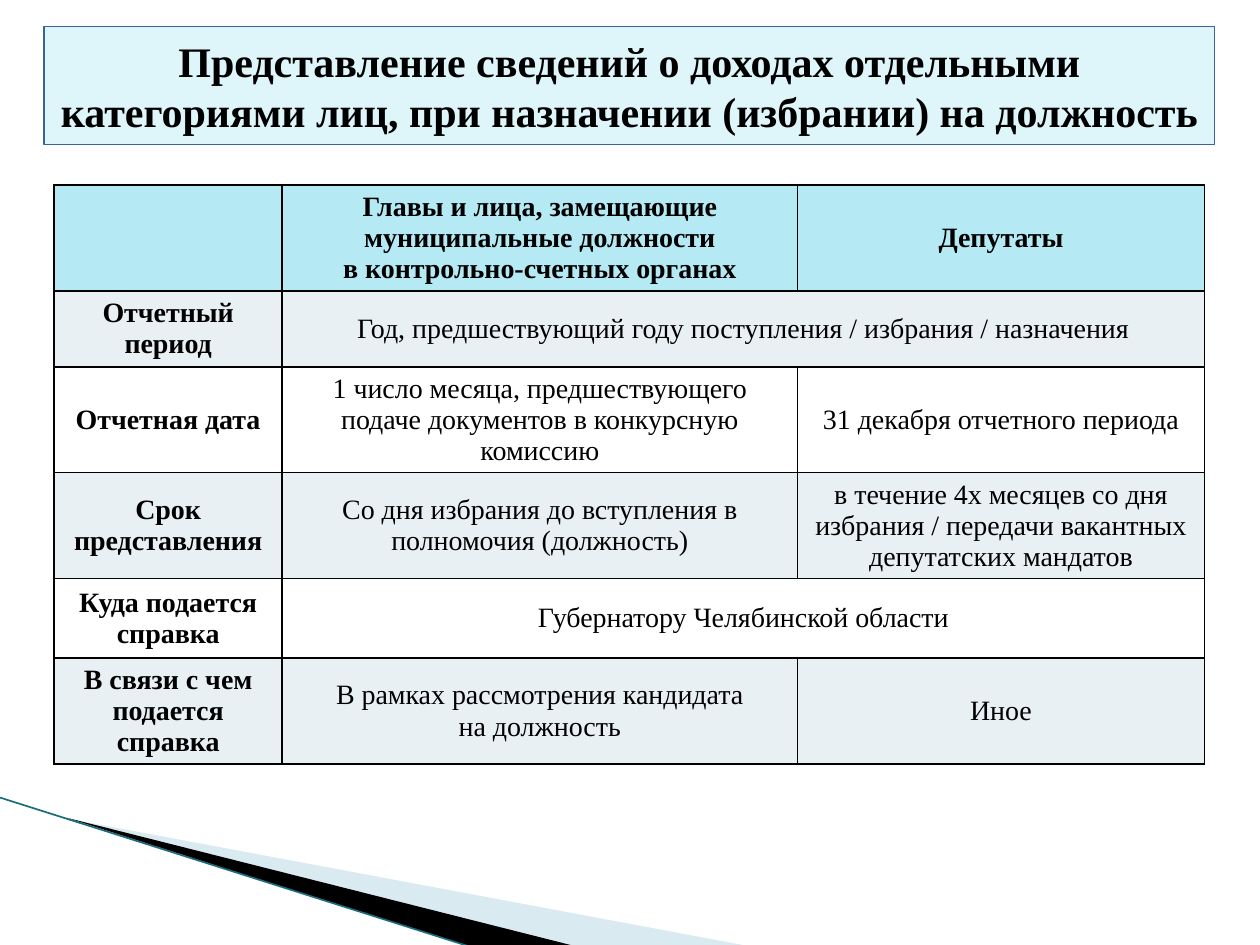
from collections import namedtuple

from lxml.etree import SubElement
from pptx import Presentation
from pptx.dml.color import RGBColor
from pptx.enum.shapes import MSO_CONNECTOR, MSO_SHAPE
from pptx.enum.text import MSO_ANCHOR, PP_ALIGN
from pptx.oxml import parse_xml
from pptx.oxml.ns import nsdecls, qn
from pptx.util import Inches, Pt

# The page is a grid of 1000 columns by 750 rows
UNIT = Inches(0.01)
COLUMNS, ROWS = 1000, 750
Box = namedtuple("Box", "left top width height")

FONT = "Times New Roman"
BLACK = RGBColor(0x00, 0x00, 0x00)
WHITE = RGBColor(0xFF, 0xFF, 0xFF)
TITLE_FILL = RGBColor(0xDE, 0xF5, 0xFA)
TITLE_LINE = RGBColor(0x39, 0x63, 0x9D)
HEADER_FILL = RGBColor(0xB5, 0xE9, 0xF4)
BAND_FILL = RGBColor(0xE8, 0xF0, 0xF4)
WEDGE_BLUE = RGBColor(0xA0, 0xCB, 0xDC)
EDGE_TEAL = RGBColor(0x1B, 0x6B, 0x7F)

TITLE = ("Представление сведений о доходах отдельными категориями лиц, "
         "при назначении (избрании) на должность")
COLUMN_WIDTHS = [181, 409, 323]
ROW_HEIGHTS = [84, 60, 84, 84, 63, 84]
# None marks a cell joined to the one on its left
TABLE_ROWS = [
    ["", "Главы и лица, замещающие муниципальные должности\vв контрольно-счетных органах",
     "Депутаты"],
    ["Отчетный период", "Год, предшествующий году поступления / избрания / назначения", None],
    ["Отчетная дата",
     "1 число месяца, предшествующего подаче документов в конкурсную комиссию",
     "31 декабря отчетного периода"],
    ["Срок представления", "Со дня избрания до вступления в полномочия (должность)",
     "в течение 4х месяцев со дня избрания / передачи вакантных депутатских мандатов"],
    ["Куда подается справка", "Губернатору Челябинской области", None],
    ["В связи с чем подается справка", "В рамках рассмотрения кандидата\vна должность", "Иное"],
]


def scaled(box):
    return [value * UNIT for value in box]


def write_text(frame, text, size, bold):
    frame.text = text
    para = frame.paragraphs[0]
    para.alignment = PP_ALIGN.CENTER
    para.font.size = Pt(size)
    for span in para.runs:
        span.font.name = FONT
        span.font.size = Pt(size)
        span.font.bold = bold
        span.font.color.rgb = BLACK


def add_wedge(page, box, points, color, opacity=100):
    corners = [(box.left + x, box.top + y) for x, y in points]
    builder = page.shapes.build_freeform(*corners[0], scale=UNIT)
    builder.add_line_segments(corners[1:], close=True)
    wedge = builder.convert_to_shape()
    wedge.shadow.inherit = False
    wedge.fill.solid()
    wedge.fill.fore_color.rgb = color
    wedge.line.fill.background()
    if opacity < 100:
        tint = wedge.fill._xPr.find(".//" + qn("a:srgbClr"))
        SubElement(tint, qn("a:alpha"), val=str(opacity * 1000))


def add_corner(page, box):
    """Pale and black wedges with a thin edge along the bottom left."""
    right, bottom = box.width, box.height
    add_wedge(page, box, [(55, 17), (right, bottom), (456, bottom)], WEDGE_BLUE, 40)
    add_wedge(page, box, [(53, 16), (457, bottom), (372, bottom)], BLACK)
    left, top, _, height = scaled(box)
    edge = page.shapes.add_connector(
        MSO_CONNECTOR.STRAIGHT, left, top, left + 372 * UNIT, top + height)
    edge.line.color.rgb = EDGE_TEAL
    edge.line.width = Pt(0.95)
    SubElement(edge._element.spPr, qn("a:effectLst"))


def add_title(page, box):
    banner = page.shapes.add_shape(MSO_SHAPE.RECTANGLE, *scaled(box))
    banner.shadow.inherit = False
    banner.fill.solid()
    banner.fill.fore_color.rgb = TITLE_FILL
    banner.line.color.rgb = TITLE_LINE
    banner.line.width = Pt(0.75)
    banner.text_frame.word_wrap = True
    banner.text_frame.vertical_anchor = MSO_ANCHOR.MIDDLE
    write_text(banner.text_frame, TITLE, 24, True)


def style_cell(cell, color):
    cell.vertical_anchor = MSO_ANCHOR.MIDDLE
    cell.fill.solid()
    cell.fill.fore_color.rgb = color
    properties = cell._tc.get_or_add_tcPr()
    for position, side in enumerate("LRTB"):
        properties.insert(position, parse_xml(
            f'<a:ln{side} {nsdecls("a")} w="12700"><a:solidFill>'
            f'<a:srgbClr val="{BLACK}"/></a:solidFill></a:ln{side}>'))


def add_rules_table(page, box):
    table = page.shapes.add_table(
        len(ROW_HEIGHTS), len(COLUMN_WIDTHS), *scaled(box)).table
    for column, width in zip(table.columns, COLUMN_WIDTHS):
        column.width = width * UNIT
    for row, height in zip(table.rows, ROW_HEIGHTS):
        row.height = height * UNIT
    for r, texts in enumerate(TABLE_ROWS):
        color = HEADER_FILL if r == 0 else BAND_FILL if r % 2 else WHITE
        for c, text in enumerate(texts):
            cell = table.cell(r, c)
            style_cell(cell, color)
            if text is None:
                table.cell(r, c - 1).merge(cell)
            else:
                write_text(cell.text_frame, text, 16, r == 0 or c == 0)


def main():
    deck = Presentation()
    deck.slide_width, deck.slide_height = COLUMNS * UNIT, ROWS * UNIT
    page = deck.slides.add_slide(deck.slide_layouts[6])
    add_corner(page, Box(0, 633, 595, 118))
    add_title(page, Box(35, 21, 929, 94))
    add_rules_table(page, Box(43, 147, sum(COLUMN_WIDTHS), sum(ROW_HEIGHTS)))
    deck.save("out.pptx")


if __name__ == "__main__":
    main()
